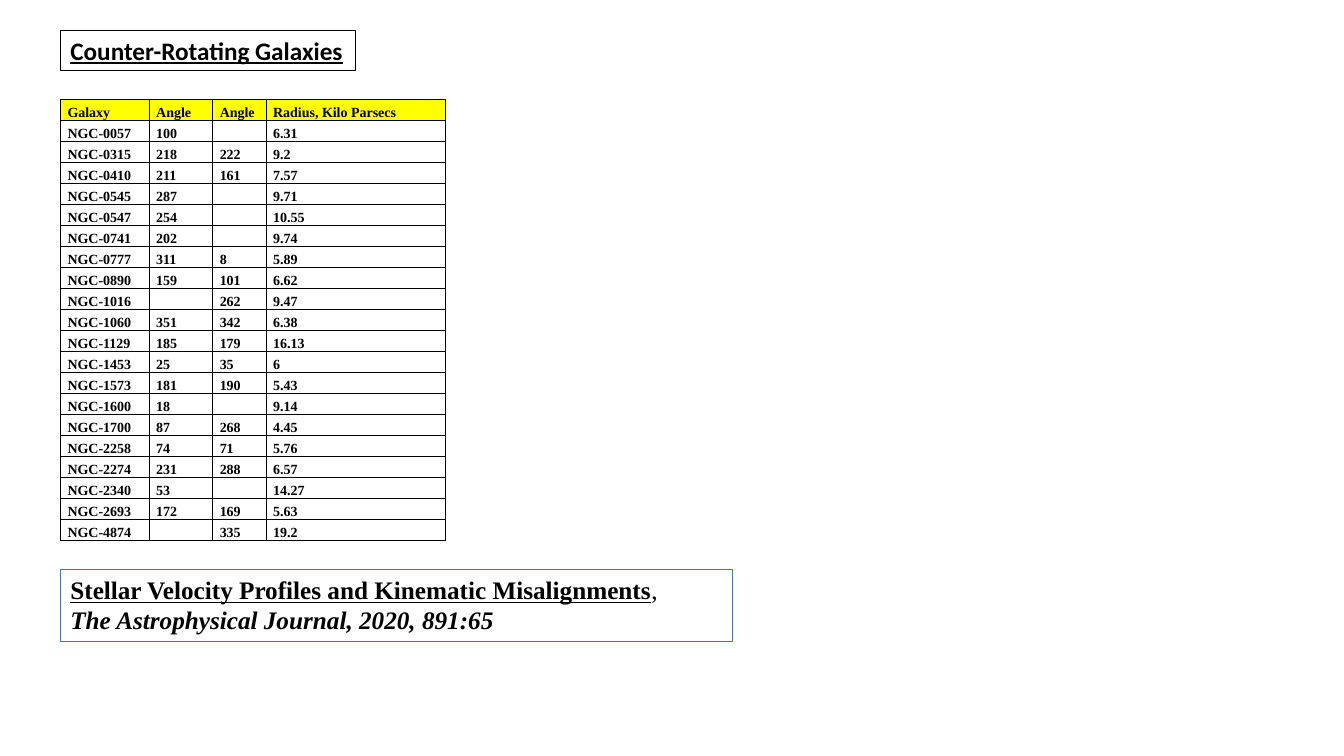
from lxml.etree import SubElement
from pptx import Presentation
from pptx.dml.color import RGBColor
from pptx.enum.text import MSO_ANCHOR, MSO_AUTO_SIZE as AutoSize, PP_ALIGN
from pptx.oxml.ns import qn
from pptx.util import Inches, Pt

COLORS = {"ink": "000000", "paper": "FFFFFF", "header": "FFFF00", "frame": "4472C4"}
SERIF, SANS = "Times New Roman", "Calibri"

TITLE = [[("Counter-Rotating Galaxies", "bu")]]
CITATION = [
    [("Stellar Velocity Profiles and Kinematic Misalignments", "bu"), (", ", "")],
    [("The Astrophysical Journal, 2020, 891:65", "bi")],
]
GALAXIES = [
    ("Galaxy", "Angle", "Angle", "Radius, Kilo Parsecs"),
    ("NGC-0057", "100", "", "6.31"),
    ("NGC-0315", "218", "222", "9.2"),
    ("NGC-0410", "211", "161", "7.57"),
    ("NGC-0545", "287", "", "9.71"),
    ("NGC-0547", "254", "", "10.55"),
    ("NGC-0741", "202", "", "9.74"),
    ("NGC-0777", "311", "8", "5.89"),
    ("NGC-0890", "159", "101", "6.62"),
    ("NGC-1016", "", "262", "9.47"),
    ("NGC-1060", "351", "342", "6.38"),
    ("NGC-1129", "185", "179", "16.13"),
    ("NGC-1453", "25", "35", "6"),
    ("NGC-1573", "181", "190", "5.43"),
    ("NGC-1600", "18", "", "9.14"),
    ("NGC-1700", "87", "268", "4.45"),
    ("NGC-2258", "74", "71", "5.76"),
    ("NGC-2274", "231", "288", "6.57"),
    ("NGC-2340", "53", "", "14.27"),
    ("NGC-2693", "172", "169", "5.63"),
    ("NGC-4874", "", "335", "19.2"),
]

SLIDE_W, SLIDE_H = 13.33, 7.5
LEFT = 0.6
TABLE_TOP, TABLE_H = 0.99, 4.38
COLUMNS = (0.88, 0.63, 0.53, 1.78)
CELL_SIZE = 10


def rgb(name):
    return RGBColor.from_string(COLORS[name])


def add_run(p, text, size, font, style):
    """Style letters: b bold, i italic, u underlined."""
    r = p.add_run()
    r.text = text
    r.font.size, r.font.name = Pt(size), font
    r.font.color.rgb = rgb("ink")
    r.font.bold, r.font.italic, r.font.underline = (c in style for c in "biu")


def add_framed_text(slide, paragraphs, top, width, height, font, line, align, wrap):
    s = slide.shapes.add_textbox(Inches(LEFT), Inches(top), Inches(width), Inches(height))
    s.line.color.rgb = rgb(line)
    s.line.width = Pt(0.75)
    tf = s.text_frame
    tf.word_wrap = wrap
    tf.auto_size = AutoSize.SHAPE_TO_FIT_TEXT
    for i, runs in enumerate(paragraphs):
        p = tf.add_paragraph() if i else tf.paragraphs[0]
        p.alignment = align
        for text, style in runs:
            add_run(p, text, 18, font, style)
    return s


def add_borders(cell):
    tc_pr = cell._tc.get_or_add_tcPr()
    for side in "LRTB":
        ln = SubElement(tc_pr, qn(f"a:ln{side}"), w=str(Pt(1)))
        fill = SubElement(ln, qn("a:solidFill"))
        SubElement(fill, qn("a:srgbClr"), val=COLORS["ink"])


def fill_cell(cell, text, is_header):
    add_borders(cell)
    if is_header:
        cell.fill.solid()
        cell.fill.fore_color.rgb = rgb("header")
    else:
        cell.fill.background()
    cell.vertical_anchor = MSO_ANCHOR.BOTTOM
    cell.margin_left = cell.margin_right = Inches(0.07)
    cell.margin_top = cell.margin_bottom = 0
    p = cell.text_frame.paragraphs[0]
    p.alignment = PP_ALIGN.JUSTIFY
    p.line_spacing = 1.07
    if text:
        add_run(p, text, CELL_SIZE, SERIF, "b")
    else:
        SubElement(p._p, qn("a:endParaRPr"), sz=str(CELL_SIZE * 100))


def add_galaxy_table(slide):
    frame = slide.shapes.add_table(len(GALAXIES), len(COLUMNS), Inches(LEFT),
                                   Inches(TABLE_TOP), Inches(sum(COLUMNS)), Inches(TABLE_H))
    table = frame.table
    table.first_row = table.horz_banding = False
    for column, width in zip(table.columns, COLUMNS):
        column.width = Inches(width)
    for i, values in enumerate(GALAXIES):
        table.rows[i].height = Inches(TABLE_H / len(GALAXIES))
        for j, text in enumerate(values):
            fill_cell(table.cell(i, j), text, i == 0)


def main():
    prs = Presentation()
    prs.slide_width, prs.slide_height = Inches(SLIDE_W), Inches(SLIDE_H)
    slide = prs.slides.add_slide(prs.slide_layouts[6])
    title = add_framed_text(slide, TITLE, 0.3, 2.93, 0.4, SANS, "ink", PP_ALIGN.LEFT, False)
    title.fill.solid()
    title.fill.fore_color.rgb = rgb("paper")
    add_framed_text(slide, CITATION, 5.65, 6.67, 0.71, SERIF, "frame", PP_ALIGN.JUSTIFY, True)
    add_galaxy_table(slide)
    prs.save("out.pptx")


if __name__ == "__main__":
    main()
